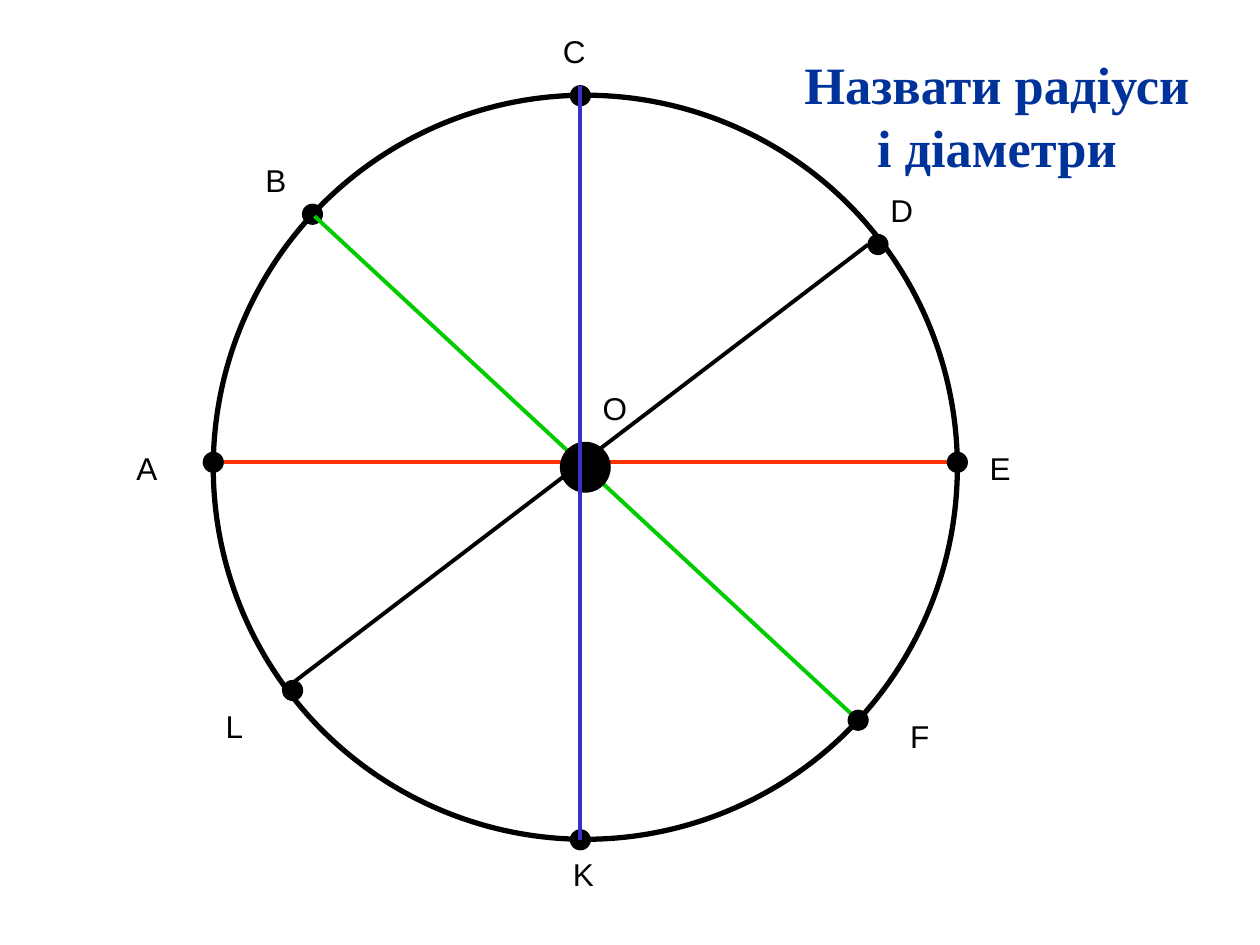
from pptx import Presentation
from pptx.dml.color import RGBColor
from pptx.enum.shapes import MSO_CONNECTOR, MSO_SHAPE
from pptx.enum.text import MSO_AUTO_SIZE, PP_ALIGN
from pptx.oxml.ns import qn
from pptx.util import Cm, Pt
from lxml import etree

BLACK = RGBColor(0x00, 0x00, 0x00)
RED = RGBColor(0xFF, 0x33, 0x00)
GREEN = RGBColor(0x00, 0xCC, 0x00)
BLUE = RGBColor(0x33, 0x33, 0xCC)
NAVY = RGBColor(0x00, 0x33, 0x99)

# Content, all lengths in cm
TITLE = "Назвати радіуси і діаметри"
CENTRE = (11.8, 9.42)
CIRCLE_SIZE, CENTRE_SIZE, DOT_SIZE = 15, 1, 0.4
LABEL_HEIGHT = 1.02

# Dot centres: some lie beneath the diameters, others cover their ends
DOTS_BELOW = [(6.3, 4.32), (5.9, 13.92), (11.7, 1.93), (17.7, 4.93), (11.7, 16.93)]
DOTS_ABOVE = [(4.3, 9.32), (17.3, 14.52), (19.3, 9.32)]

# Start, end, colour
DIAMETERS_BELOW = [
    ((4.3, 9.32), (19.3, 9.32), RED),
    ((6.3, 4.32), (17.3, 14.52), GREEN),
]
DIAMETERS_ABOVE = [
    ((5.7, 13.92), (17.5, 4.93), BLACK),
    ((11.7, 1.73), (11.7, 16.93), BLUE),
]

# Letter, left, top, width
LABELS = [
    ("А", 2.5, 8.92, 1.4),
    ("В", 5.1, 3.12, 1.4),
    ("С", 11.1, 0.53, 1.2),
    ("D", 17.7, 3.73, 1),
    ("E", 19.7, 8.92, 2),
    ("F", 18.1, 14.32, 1.2),
    ("K", 11.3, 17.12, 1.4),
    ("L", 4.3, 14.12, 0.8),
    ("O", 11.9, 7.72, 1.6),
]

presentation = Presentation()
presentation.slide_width, presentation.slide_height = Cm(25.4), Cm(19.05)
slide = presentation.slides.add_slide(presentation.slide_layouts[6])


def add_round(centre, size, fill=BLACK, weight=0.75):
    x, y = centre
    ellipse = slide.shapes.add_shape(
        MSO_SHAPE.OVAL, Cm(x - size / 2), Cm(y - size / 2), Cm(size), Cm(size))
    ellipse.shadow.inherit = False
    if fill is None:
        ellipse.fill.background()
    else:
        ellipse.fill.solid()
        ellipse.fill.fore_color.rgb = fill
    ellipse.line.color.rgb = BLACK
    ellipse.line.width = Pt(weight)


def add_diameter(start, end, color):
    diameter = slide.shapes.add_connector(
        MSO_CONNECTOR.STRAIGHT, *(Cm(value) for value in start + end))
    diameter.line.color.rgb = color
    diameter.line.width = Pt(2.25)
    etree.SubElement(diameter._element.spPr, qn("a:effectLst"))


def add_text(text, left, top, width, height, font="Arial", size=18,
             color=BLACK, bold=False, align=PP_ALIGN.LEFT):
    box = slide.shapes.add_textbox(Cm(left), Cm(top), Cm(width), Cm(height))
    frame = box.text_frame
    frame.word_wrap = True
    frame.auto_size = MSO_AUTO_SIZE.SHAPE_TO_FIT_TEXT
    paragraph = frame.paragraphs[0]
    paragraph.alignment = align
    run = paragraph.add_run()
    run.text = text
    run.font.name, run.font.size = font, Pt(size)
    run.font.bold, run.font.color.rgb = bold, color


# Circle, its centre, points and diameters, from back to front
for dot in DOTS_BELOW:
    add_round(dot, DOT_SIZE)
for diameter_ends in DIAMETERS_BELOW:
    add_diameter(*diameter_ends)
add_round(CENTRE, CIRCLE_SIZE, fill=None, weight=3)
add_round(CENTRE, CENTRE_SIZE)
for dot in DOTS_ABOVE:
    add_round(dot, DOT_SIZE)
for diameter_ends in DIAMETERS_ABOVE:
    add_diameter(*diameter_ends)

# Point letters and the task
for letter, left, top, width in LABELS:
    add_text(letter, left, top, width, LABEL_HEIGHT)
add_text(TITLE, 15.7, 0.92, 8.8, 2.82, font="Times New Roman", size=30,
         color=NAVY, bold=True, align=PP_ALIGN.CENTER)

presentation.save("out.pptx")
